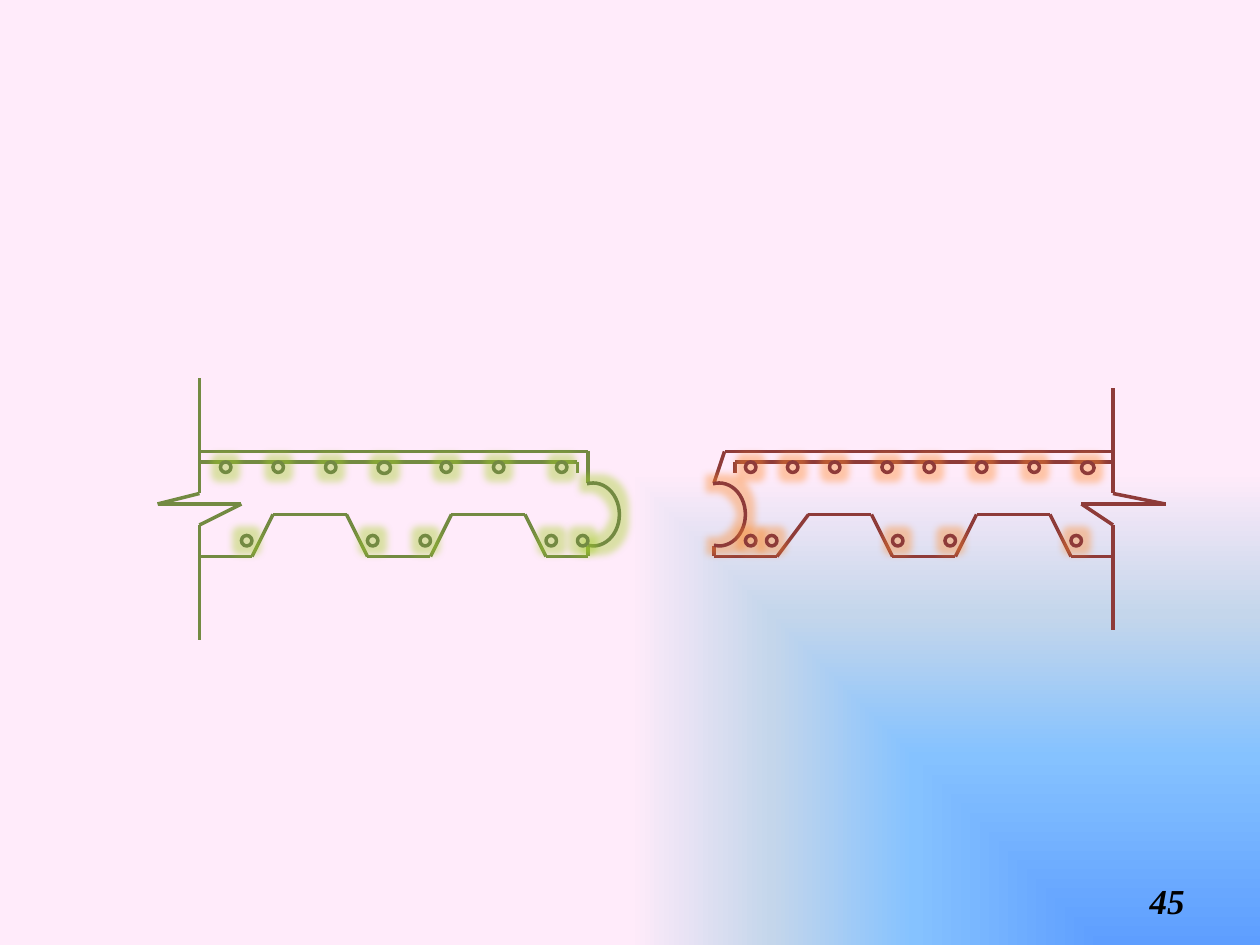
"""Build a slide showing two facing deck sections with reinforcement bars."""
from itertools import pairwise

from lxml import etree
from pptx import Presentation, util as u
from pptx.dml.color import RGBColor
from pptx.enum import shapes, text
from pptx.oxml import parse_xml
from pptx.oxml.ns import nsdecls, qn

THEME = {
    "font": "Times New Roman", "size": 20, "ink": "000000", "line": 2,
    "glow_radius": 8, "glow_alpha": 40,
    "background": [(0, "5E9EFF"), (40, "85C2FF"), (70, "C4D6EB"), (100, "FFEBFA")],
    "left": ("738A42", "A5D028"), "right": ("8E3B39", "FF8B2B"),
}
WIDTH, HEIGHT = 10, 7.5
COLUMNS, ROWS = 120, 90
TOP_BARS, BOTTOM_BARS = 44, 51
ARC_ANGLES = (155.23, 59.84)

SECTIONS = {
    "left": {
        "paths": [
            [(19, 43), (56, 43), (56, 46)],
            [(19, 53), (24, 53), (26, 49), (33, 49), (35, 53), (41, 53),
             (43, 49), (50, 49), (52, 53), (56, 53), (56, 52)],
            [(19, 44), (55, 44), (55, 45)],
            [(19, 36), (19, 47), (15, 48), (23, 48), (19, 50), (19, 61)],
        ],
        "joint": (54, 46, 5, 6),
        "top": [21, 26, 31, 36, 42, 47, 53],
        "bottom": [23, 35, 40, 52, 55],
        "large": 36,
    },
    "right": {
        "paths": [
            [(106, 43), (69, 43), (68, 46)],
            [(68, 52), (68, 53), (74, 53), (77, 49), (83, 49), (85, 53),
             (91, 53), (93, 49), (100, 49), (102, 53), (106, 53)],
            [(106, 44), (70, 44), (70, 45)],
            [(106, 37), (106, 47), (111, 48), (103, 48), (106, 50), (106, 60)],
        ],
        "joint": (66, 46, 5, 6),
        "top": [71, 75, 79, 84, 88, 93, 98, 103],
        "bottom": [71, 73, 85, 90, 102],
        "large": 103,
    },
}
PAGE = ("45", (86, 83.4, 28, 4.8))


def x(column):
    return u.Inches(WIDTH * column / COLUMNS)


def y(row):
    return u.Inches(HEIGHT * row / ROWS)


def place(box):
    left, top, width, height = box
    return x(left), y(top), x(width), y(height)


def set_line(sp, color):
    sp.line.color.rgb = RGBColor.from_string(color)
    sp.line.width = u.Pt(THEME["line"])


def add_path(s, points, color):
    for (x1, y1), (x2, y2) in pairwise(points):
        sp = s.shapes.add_connector(shapes.MSO_CONNECTOR.STRAIGHT, x(x1), y(y1), x(x2), y(y2))
        set_line(sp, color)
        etree.SubElement(sp._element.spPr, qn("a:effectLst"))


def add_glowing(s, kind, box, colors):
    color, glow = colors
    sp = s.shapes.add_shape(kind, *place(box))
    sp.fill.background()
    set_line(sp, color)
    sp.shadow.inherit = False
    effects = sp._element.spPr.find(qn("a:effectLst"))
    effects.append(parse_xml(
        f'<a:glow {nsdecls("a")} rad="{u.Pt(THEME["glow_radius"])}"><a:srgbClr val="{glow}">'
        f'<a:alpha val="{THEME["glow_alpha"] * 1000}"/></a:srgbClr></a:glow>'))
    return sp


def add_section(s, section, colors):
    for points in section["paths"]:
        add_path(s, points, colors[0])
    arc = add_glowing(s, shapes.MSO_SHAPE.ARC, section["joint"], colors)
    for i, angle in enumerate(ARC_ANGLES):
        arc.adjustments[i] = angle
    for row, columns in ((TOP_BARS, section["top"]), (BOTTOM_BARS, section["bottom"])):
        for column in columns:
            large = row == TOP_BARS and column == section["large"]
            size = (1.2, 1.1) if large else (1, 1)
            add_glowing(s, shapes.MSO_SHAPE.OVAL, (column, row, *size), colors)


def set_background(s):
    stops = "".join(f'<a:gs pos="{pos * 1000}"><a:srgbClr val="{color}"/></a:gs>'
                    for pos, color in THEME["background"])
    s._element.cSld.insert(0, parse_xml(
        f'<p:bg {nsdecls("p", "a")}><p:bgPr><a:gradFill rotWithShape="1"><a:gsLst>{stops}</a:gsLst>'
        '<a:path path="rect"><a:fillToRect l="100000" t="100000"/></a:path></a:gradFill>'
        '<a:effectLst/></p:bgPr></p:bg>'))


def add_page_number(s):
    number, box = PAGE
    tf = s.shapes.add_textbox(*place(box)).text_frame
    tf.word_wrap = True
    tf.vertical_anchor = text.MSO_ANCHOR.MIDDLE
    p = tf.paragraphs[0]
    p.text = number
    p.alignment = text.PP_ALIGN.RIGHT
    p.font.name, p.font.size = THEME["font"], u.Pt(THEME["size"])
    p.font.bold = p.font.italic = True
    p.font.color.rgb = RGBColor.from_string(THEME["ink"])


def main():
    prs = Presentation()
    prs.slide_width, prs.slide_height = u.Inches(WIDTH), u.Inches(HEIGHT)
    s = prs.slides.add_slide(prs.slide_layouts[6])
    set_background(s)
    for side, section in SECTIONS.items():
        add_section(s, section, THEME[side])
    add_page_number(s)
    prs.save("out.pptx")


if __name__ == "__main__":
    main()
